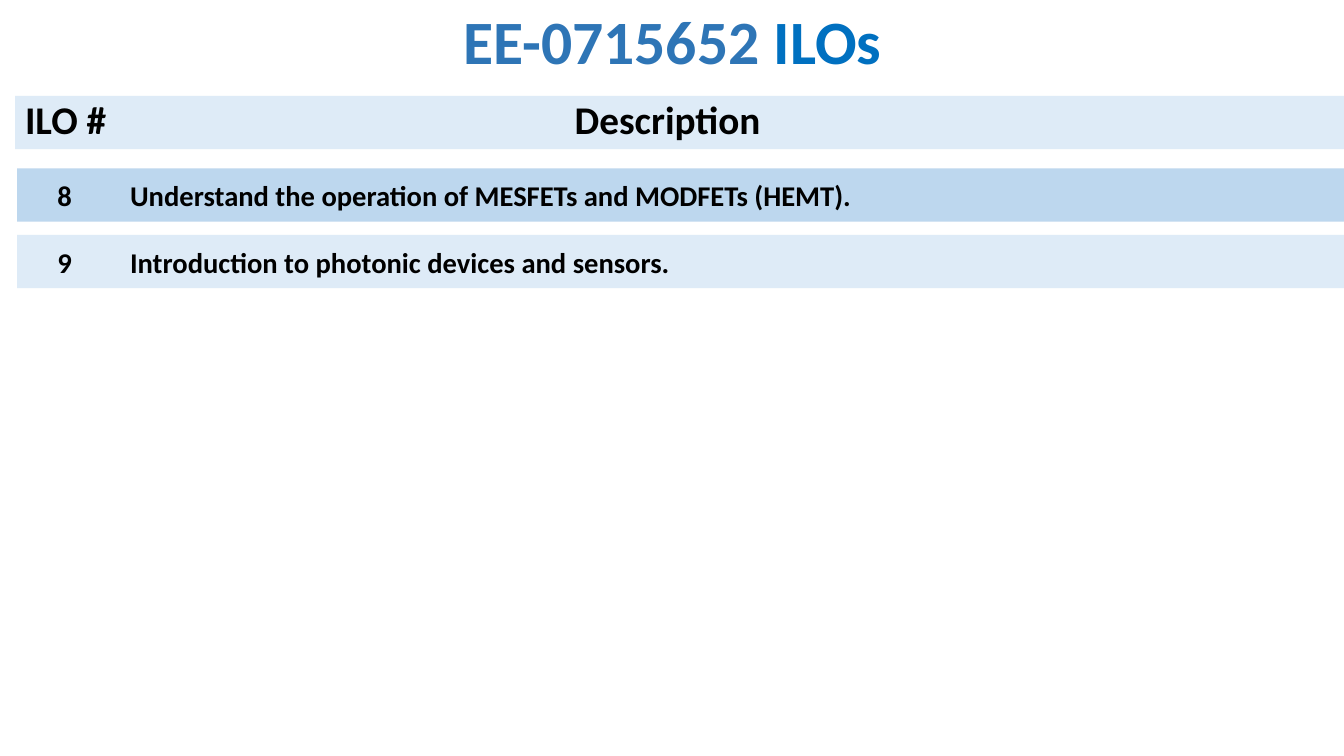
from dataclasses import dataclass

from lxml import etree
from pptx import Presentation
from pptx.dml.color import RGBColor
from pptx.enum.shapes import MSO_SHAPE
from pptx.enum.text import MSO_ANCHOR, MSO_AUTO_SIZE, PP_ALIGN
from pptx.oxml.ns import qn
from pptx.util import Inches, Pt

RECTANGLE = MSO_SHAPE.RECTANGLE
TOP, MIDDLE = MSO_ANCHOR.TOP, MSO_ANCHOR.MIDDLE
LEFT, CENTER = PP_ALIGN.LEFT, PP_ALIGN.CENTER
NO_FIT = MSO_AUTO_SIZE.NONE


@dataclass(frozen=True)
class Theme:
    font: str = "Calibri"
    course: RGBColor = RGBColor(0x2E, 0x75, 0xB6)
    accent: RGBColor = RGBColor(0x00, 0x70, 0xC0)
    text: RGBColor = RGBColor(0x00, 0x00, 0x00)
    pale: RGBColor = RGBColor(0xDE, 0xEB, 0xF7)
    medium: RGBColor = RGBColor(0xBD, 0xD7, 0xEE)
    title_size: float = 44
    header_size: float = 28
    row_size: float = 20.4


theme = Theme()
BAND_WIDTH, BAND_HEIGHT = 13.19, 0.53
NUMBER_WIDTH = 1.1


def style_font(font, size, color):
    font.name, font.size, font.bold = theme.font, Pt(size), True
    font.color.rgb = color


def write_column(box, text, size, inset, anchor, margin_top, spacing):
    """Write one column's text, starting inset inches from the box's left edge."""
    frame = box.text_frame
    frame.word_wrap, frame.auto_size = True, NO_FIT
    frame.vertical_anchor = anchor
    frame.margin_left, frame.margin_right = Inches(inset), Inches(0)
    frame.margin_top, frame.margin_bottom = Inches(margin_top), Inches(0.05)
    frame.text = text
    para = frame.paragraphs[0]
    para.alignment, para.line_spacing, para.space_before = LEFT, spacing, Pt(0)
    properties = para._p.get_or_add_pPr()
    properties.set("marL", "0")
    properties.set("indent", "0")
    etree.SubElement(properties, qn("a:buNone"))
    style_font(para.runs[0].font, size, theme.text)


deck = Presentation()
deck.slide_width, deck.slide_height = Inches(13.33), Inches(7.5)
page = deck.slides.add_slide(deck.slide_layouts[1])

title = page.shapes.title
title.left, title.top = Inches(0.92), Inches(-0.05)
title.width, title.height = Inches(11.5), Inches(0.99)
title.text_frame.vertical_anchor = MIDDLE
title.text_frame.auto_size = NO_FIT
para = title.text_frame.paragraphs[0]
para.alignment, para.line_spacing = CENTER, 0.9
for text, color in (("EE-0715652 ", theme.course), ("ILOs", theme.accent)):
    span = para.add_run()
    span.text = text
    style_font(span.font, theme.title_size, color)

header = page.placeholders[1]
header.left, header.top = Inches(0.15), Inches(0.95)
header.width, header.height = Inches(BAND_WIDTH), Inches(BAND_HEIGHT)
header_style = (TOP, 0.05, 0.9)
row_style = (MIDDLE, 0.09, 0.95)
bands = [(header, theme.pale, "ILO #", 0.1, "Description", 5.55,
          theme.header_size, header_style)]

outcomes = (
    ("8", "Understand the operation of MESFETs and MODFETs (HEMT).", theme.medium),
    ("9", "Introduction to photonic devices and sensors.", theme.pale),
)
for index, (number, description, fill) in enumerate(outcomes):
    row = page.shapes.add_shape(
        RECTANGLE, Inches(0.17), Inches(1.67 + 0.66 * index),
        Inches(BAND_WIDTH), Inches(BAND_HEIGHT))
    row.shadow.inherit = False
    bands.append((row, fill, number, 0.4, description, 1.12,
                  theme.row_size, row_style))

for band, fill, number, number_inset, description, inset, size, style in bands:
    band.fill.solid()
    band.fill.fore_color.rgb = fill
    band.line.fill.background()
    write_column(band, description, size, inset, *style)
    number_box = page.shapes.add_textbox(
        band.left, band.top, Inches(NUMBER_WIDTH), band.height)
    write_column(number_box, number, size, number_inset, *style)

deck.save("out.pptx")
